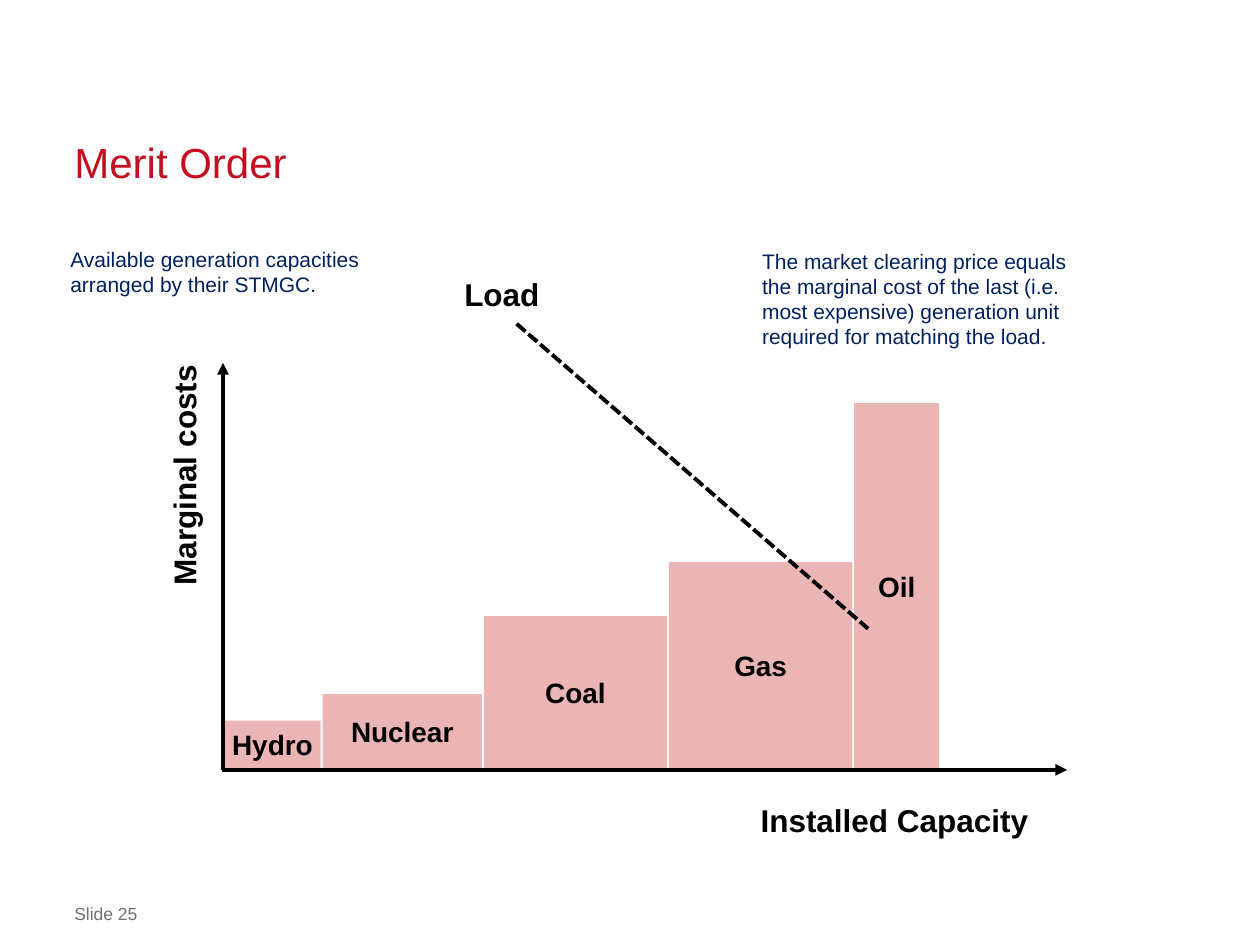
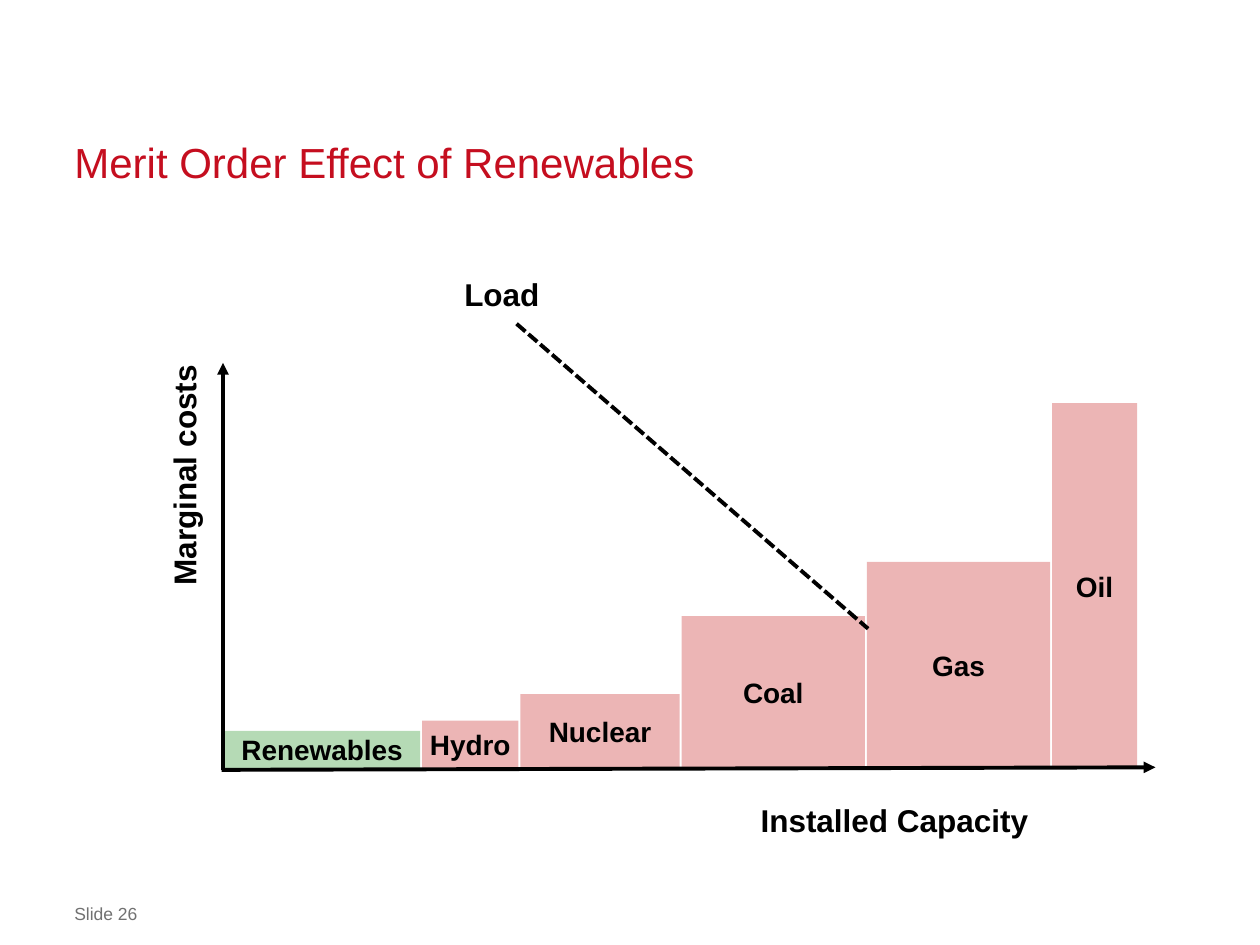
from typing import NamedTuple

from lxml.etree import SubElement
from pptx import Presentation
from pptx.dml.color import RGBColor
from pptx.enum.dml import MSO_LINE as Dash
from pptx.enum.shapes import MSO_CONNECTOR as Link, MSO_SHAPE as Form
from pptx.enum.text import MSO_ANCHOR as Anchor, PP_ALIGN as Align
from pptx.oxml.ns import qn
from pptx.slide import Slide
from pptx.text.text import TextFrame
from pptx.util import Inches, Pt

RED = RGBColor(0xC5, 0x0E, 0x1F)
GREY = RGBColor(0x71, 0x71, 0x71)
NAVY = RGBColor(0x00, 0x20, 0x60)
BLACK = RGBColor(0, 0, 0)
FOSSIL = RGBColor(0xC0, 0, 0)
GREEN = RGBColor(0, 0x80, 0)
FONT = "Arial"
LEFT, BASE, GAP = 1.78, 6.1, 0.015
ALPHA = 29


class Plant(NamedTuple):
    """One block of capacity: pitch along the axis and cost as height."""
    name: str
    pitch: float
    cost: float
    color: RGBColor = FOSSIL


class Label(NamedTuple):
    """A text box with its place and style."""
    text: str
    left: float
    top: float
    width: float
    height: float
    size: int = 18
    color: RGBColor = BLACK
    bold: bool = True
    align: Align = Align.RIGHT
    turn: int = 0
    inset: bool = True


class Page(NamedTuple):
    """What differs from slide to slide."""
    title: str
    number: int
    plants: list[Plant]
    end: tuple[float, float]
    notes: list[Label]


PLANTS = [
    Plant("Hydro", 0.78, 0.38),
    Plant("Nuclear", 1.28, 0.59),
    Plant("Coal", 1.47, 1.21),
    Plant("Gas", 1.47, 1.64),
    Plant("Oil", 0.69, 2.9),
]
LABELS = [
    Label("Marginal costs", 0.36, 3.7, 2.2, 0.4, turn=270),
    Label("Installed Capacity", 5.85, 6.31, 2.41, 0.4),
    Label("Load", 3.53, 2.13, 0.85, 0.4),
]


def note(text: str, left: float, top: float, width: float, height: float) -> Label:
    """Return a navy remark."""
    return Label(text, left, top, width, height, 12, NAVY, False, Align.LEFT)


def plain(text: str, top: float, width: float, height: float, size: int, color: RGBColor) -> Label:
    """Return a text without insets at the left margin."""
    return Label(text, 0.59, top, width, height, size, color, False, Align.LEFT, inset=False)


PAGES = [
    Page("Merit Order", 25, PLANTS, (8.47, 6.11), [
        note("Available generation capacities arranged by their STMGC.",
             0.46, 1.91, 2.6, 0.5),
        note("The market clearing price equals the marginal cost of the last "
             "(i.e. most expensive) generation unit required for matching the load.",
             5.95, 1.92, 2.79, 0.91),
    ]),
    Page("Merit Order Effect of Renewables", 26,
         [Plant("Renewables", 1.57, 0.3, GREEN), *PLANTS], (9.17, 6.09), []),
]


def write(frame: TextFrame, text: str, size: int, color: RGBColor, bold: bool, align: Align) -> None:
    """Fill a frame with one styled paragraph."""
    frame.text = text
    para = frame.paragraphs[0]
    para.alignment = align
    font = para.runs[0].font
    font.name, font.size, font.bold = FONT, Pt(size), bold
    font.color.rgb = color


def put(slide: Slide, label: Label) -> TextFrame:
    """Draw a label and return its frame."""
    box = slide.shapes.add_textbox(
        Inches(label.left), Inches(label.top), Inches(label.width), Inches(label.height))
    box.rotation = label.turn
    frame = box.text_frame
    frame.word_wrap = True
    if not label.inset:
        frame.margin_left = frame.margin_top = frame.margin_right = frame.margin_bottom = 0
    write(frame, label.text, label.size, label.color, label.bold, label.align)
    return frame


def block(slide: Slide, plant: Plant, left: float) -> None:
    """Draw one plant standing on the base line."""
    bar = slide.shapes.add_shape(
        Form.RECTANGLE, Inches(left), Inches(BASE - plant.cost),
        Inches(plant.pitch - GAP), Inches(plant.cost))
    bar.shadow.inherit = False
    bar.line.fill.background()
    bar.fill.solid()
    bar.fill.fore_color.rgb = plant.color
    tint = bar.fill._xPr.find(qn("a:solidFill"))[0]
    SubElement(tint, qn("a:alpha"), val=str(ALPHA * 1000))
    frame = bar.text_frame
    frame.word_wrap = False
    frame.vertical_anchor = Anchor.MIDDLE
    write(frame, plant.name, 16, BLACK, True, Align.CENTER)


def rule(slide: Slide, start: tuple[float, float], end: tuple[float, float], axis: bool = True) -> None:
    """Draw an axis with an arrowhead, or a dashed line."""
    line = slide.shapes.add_connector(
        Link.STRAIGHT, *(Inches(value) for value in (*start, *end)))
    line.line.color.rgb = BLACK
    line.line.width = Pt(2.25)
    if axis:
        SubElement(line.line._get_or_add_ln(), qn("a:tailEnd"), type="triangle")
    else:
        line.line.dash_style = Dash.SQUARE_DOT
    SubElement(line._element.spPr, qn("a:effectLst"))


def draw(slide: Slide, page: Page) -> None:
    """Draw one merit order slide."""
    title = put(slide, plain(page.title, 1.07, 8.82, 0.83, 24, RED))
    title.paragraphs[0].line_spacing = Pt(30)
    put(slide, plain(f"Slide {page.number}", 7.17, 7.24, 0.17, 10, GREY))
    left = LEFT
    for plant in page.plants:
        block(slide, plant, left)
        left += plant.pitch
    rule(slide, (1.76, 6.11), page.end)
    rule(slide, (1.77, 6.11), (1.77, 2.88))
    rule(slide, (4.1, 2.57), (6.89, 4.99), axis=False)
    for label in LABELS + page.notes:
        put(slide, label)


def main() -> None:
    """Build and save the slides."""
    deck = Presentation()
    deck.slide_width, deck.slide_height = Inches(10), Inches(7.5)
    for page in PAGES:
        draw(deck.slides.add_slide(deck.slide_layouts[6]), page)
    deck.save("out.pptx")


if __name__ == "__main__":
    main()
